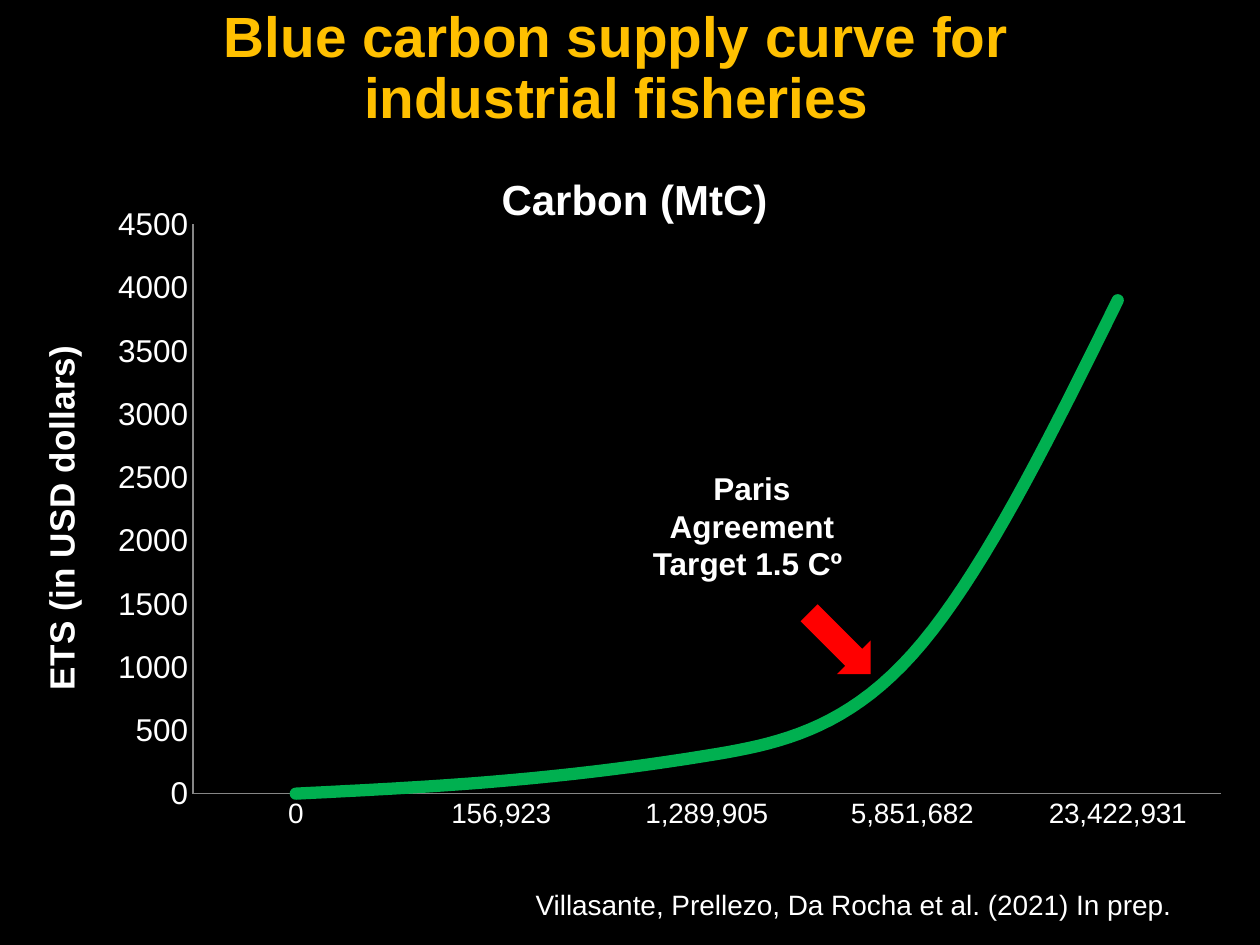
from dataclasses import dataclass

from lxml.etree import SubElement
from pptx import Presentation
from pptx.chart.chart import Chart
from pptx.chart.data import CategoryChartData
from pptx.dml.color import RGBColor
from pptx.enum.chart import XL_CHART_TYPE as ChartType, XL_MARKER_STYLE as Marker, XL_TICK_MARK as Tick
from pptx.enum.shapes import MSO_SHAPE as Preset
from pptx.enum.text import MSO_ANCHOR as Anchor, PP_ALIGN as Align
from pptx.oxml.ns import qn
from pptx.slide import Slide
from pptx.text.text import Font, TextFrame
from pptx.util import Emu, Pt

FONT = "Arial"
BLACK, WHITE, GOLD, GREEN, RED, GREY = "000000", "FFFFFF", "FFC000", "00B050", "FF0000", "868686"
INSET = 6


@dataclass
class Box:
    left: int
    top: int
    width: int
    height: int

    def lengths(self) -> tuple[Emu, ...]:
        return tuple(px(n) for n in (self.left, self.top, self.width, self.height))


@dataclass
class Label:
    text: str
    box: Box
    size: float
    bold: bool
    align: Align


LABELS = [
    Label("Villasante, Prellezo, Da Rocha et al. (2021) In prep.", Box(527, 879, 722, 52), 16, False, Align.LEFT),
    Label("Paris Agreement Target 1.5 Cº ", Box(630, 456, 244, 141), 18, True, Align.CENTER),
]
SUPPLY = {"0": 0, "156,923": 100, "1,289,905": 300, "5,851,682": 1100, "23,422,931": 3900}
PLOT = {"x": 0.146, "y": 0.112, "w": 0.824, "h": 0.793}


def px(count: int) -> Emu:
    return Emu(count * 914400 // 126)


def color(value: str) -> RGBColor:
    return RGBColor.from_string(value)


def style_font(font: Font, size: float, bold: bool, tone: str = WHITE) -> None:
    font.name = FONT
    font.size = Pt(size)
    font.bold = bold
    font.color.rgb = color(tone)


def fill_text(frame: TextFrame, text: str, align: Align, anchor: Anchor) -> None:
    frame.word_wrap = True
    frame.vertical_anchor = anchor
    frame.margin_left = frame.margin_right = px(INSET)
    frame.margin_top = frame.margin_bottom = px(INSET)
    frame.text = text
    frame.paragraphs[0].alignment = align


def format_title(page: Slide) -> None:
    title = page.shapes.title
    title.left, title.top, title.width, title.height = Box(11, 14, 1226, 111).lengths()
    title.fill.solid()
    title.fill.fore_color.rgb = color(BLACK)
    fill_text(title.text_frame, "Blue carbon supply curve for \vindustrial fisheries ", Align.CENTER, Anchor.MIDDLE)
    para = title.text_frame.paragraphs[0]
    para.line_spacing = 0.9
    style_font(para.font, 32.4, True, GOLD)


def add_label(page: Slide, label: Label) -> None:
    shape = page.shapes.add_shape(Preset.ROUNDED_RECTANGLE, *label.box.lengths())
    shape.shadow.inherit = False
    shape.fill.background()
    shape.line.fill.background()
    fill_text(shape.text_frame, label.text, label.align, Anchor.TOP)
    style_font(shape.text_frame.paragraphs[0].font, label.size, label.bold)


def add_arrow(page: Slide) -> None:
    arrow = page.shapes.add_shape(Preset.DOWN_ARROW, *Box(816, 600, 48, 87).lengths())
    arrow.rotation = 315
    arrow.shadow.inherit = False
    arrow.fill.solid()
    arrow.fill.fore_color.rgb = color(RED)
    arrow.line.fill.background()


def place_plot(chart: Chart) -> None:
    area = chart.plots[0]._element.getparent()
    for old in area.findall(qn("c:layout")):
        area.remove(old)
    layout = SubElement(area, qn("c:layout"))
    area.insert(0, layout)
    manual = SubElement(layout, qn("c:manualLayout"))
    settings = {"layoutTarget": "inner", "xMode": "edge", "yMode": "edge", **PLOT}
    for name, value in settings.items():
        SubElement(manual, qn(f"c:{name}")).set("val", str(value))


def add_supply_chart(page: Slide) -> None:
    data = CategoryChartData(number_format="0")
    data.categories = list(SUPPLY)
    data.add_series("Series 1", list(SUPPLY.values()))
    frame = page.shapes.add_chart(ChartType.LINE, *Box(11, 144, 1247, 718).lengths(), data)
    chart = frame.chart
    chart.has_legend = False
    style_font(chart.font, 16, False)
    place_plot(chart)

    prices, carbon = chart.value_axis, chart.category_axis
    prices.minimum_scale, prices.maximum_scale, prices.major_unit = 0, 4500, 500
    prices.has_major_gridlines = False
    for axis, size in ((prices, 18), (carbon, 16)):
        axis.major_tick_mark = axis.minor_tick_mark = Tick.NONE
        axis.format.line.color.rgb = color(GREY)
        axis.format.line.width = Pt(0.75)
        style_font(axis.tick_labels.font, size, False)

    headings = (
        (chart.chart_title, "Carbon (MtC)", 24),
        (prices.axis_title, "ETS (in USD dollars)", 20),
    )
    for heading, text, size in headings:
        heading.text_frame.text = text
        style_font(heading.text_frame.paragraphs[0].font, size, True)

    curve = chart.plots[0].series[0]
    curve.smooth = True
    curve.marker.style = Marker.NONE
    curve.format.line.color.rgb = color(GREEN)
    curve.format.line.width = Pt(7)
    curve.format.line._get_or_add_ln().set("cap", "rnd")


def main() -> None:
    deck = Presentation()
    deck.slide_width, deck.slide_height = px(1260), px(945)
    page = deck.slides.add_slide(deck.slide_layouts[5])
    page.background.fill.solid()
    page.background.fill.fore_color.rgb = color(BLACK)
    format_title(page)
    add_supply_chart(page)
    add_arrow(page)
    for label in LABELS:
        add_label(page, label)
    deck.save("out.pptx")


if __name__ == "__main__":
    main()
